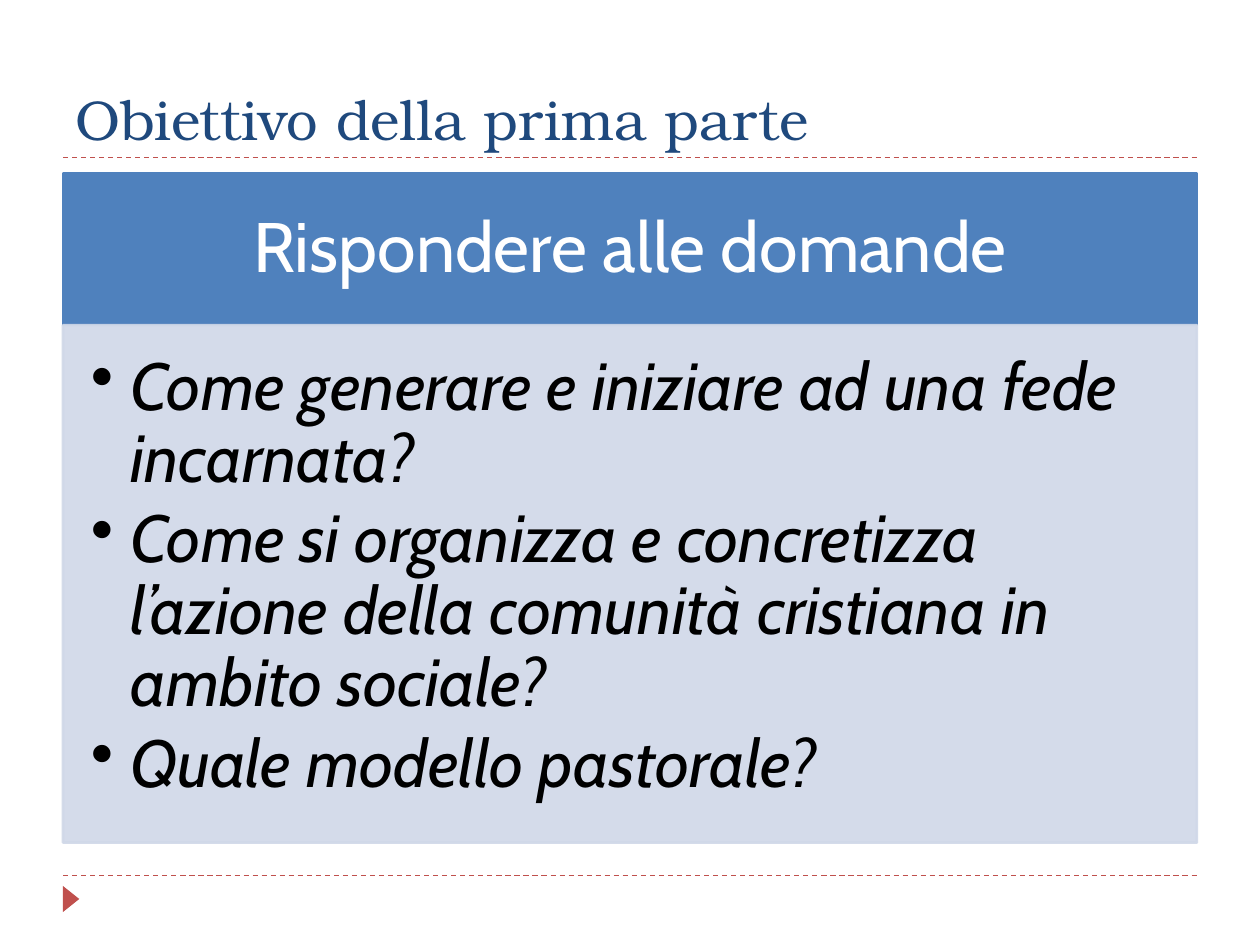
from lxml.etree import SubElement
from pptx import Presentation
from pptx.dml.color import RGBColor
from pptx.enum.dml import MSO_LINE_DASH_STYLE as Dash
from pptx.enum.shapes import MSO_CONNECTOR, MSO_SHAPE
from pptx.enum.text import MSO_ANCHOR as Anchor, PP_ALIGN as Align
from pptx.oxml.ns import qn
from pptx.util import Pt

# Content
TITLE = "Obiettivo della prima parte"
HEADING = "Rispondere alle domande"
QUESTIONS = [
    "Come generare e iniziare ad una fede incarnata?",
    "Come si organizza e concretizza l’azione della comunità cristiana in ambito sociale?",
    "Quale modello pastorale?",
]

# Style
RED = RGBColor(0xC0, 0x50, 0x4D)
NAVY = RGBColor(0x1F, 0x49, 0x7D)
BLUE = RGBColor(0x4F, 0x81, 0xBD)
PALE = RGBColor(0xD0, 0xD8, 0xE8)
WHITE = RGBColor(0xFF, 0xFF, 0xFF)
BLACK = RGBColor(0, 0, 0)
TITLE_FONT, BODY_FONT = "TeX Gyre Bonum", "Cabin"

# Layout in points
LEFT, WIDTH = 36, 648
RULES_Y = (500.4, 90)
HEAD_TOP, HEAD_HEIGHT = 99.2, 86.6
BODY_TOP, BODY_HEIGHT = HEAD_TOP + HEAD_HEIGHT, 295.7
INDENT = 22.5


def set_frame(shape, anchor, insets):
    frame = shape.text_frame
    frame.word_wrap = True
    frame.vertical_anchor = anchor
    (frame.margin_left, frame.margin_top,
     frame.margin_right, frame.margin_bottom) = map(Pt, insets)
    return frame


def write(paragraph, text, size, font, color, italic=False):
    run = paragraph.add_run()
    run.text = text
    run.font.size = Pt(size)
    run.font.name = font
    run.font.color.rgb = color
    run.font.italic = italic


def add_block(kind, left, top, width, height, color, outline=None, alpha=None):
    block = slide.shapes.add_shape(kind, Pt(left), Pt(top), Pt(width), Pt(height))
    block.shadow.inherit = False
    block.fill.solid()
    block.fill.fore_color.rgb = color
    if outline:
        block.line.color.rgb = color
        block.line.width = Pt(outline)
    else:
        block.line.fill.background()
    if alpha:
        for tint in block._element.spPr.iter(qn("a:srgbClr")):
            SubElement(tint, qn("a:alpha"), val=str(alpha * 1000))
    return block


def add_bullet(paragraph):
    props = paragraph._p.get_or_add_pPr()
    props.set("marL", str(Pt(INDENT)))
    props.set("indent", str(-Pt(INDENT)))
    SubElement(props, qn("a:buChar"), char="•")


prs = Presentation()
prs.slide_width, prs.slide_height = Pt(720), Pt(540)
slide = prs.slides.add_slide(prs.slide_layouts[6])

# Dashed rules and corner marker
for y in RULES_Y:
    rule = slide.shapes.add_connector(
        MSO_CONNECTOR.STRAIGHT, Pt(LEFT), Pt(y), Pt(LEFT + WIDTH), Pt(y))
    rule.line.color.rgb = RED
    rule.line.width = Pt(0.75)
    rule.line.dash_style = Dash.DASH
    SubElement(rule._element.spPr, qn("a:effectLst"))
marker = add_block(MSO_SHAPE.ISOSCELES_TRIANGLE, 33.1, 509, 15, 9.4, RED)
marker.rotation = 90

# Title
title = slide.shapes.add_textbox(Pt(LEFT), Pt(12.2), Pt(WIDTH), Pt(77.8))
title_frame = set_frame(title, Anchor.BOTTOM, (7.2, 3.6, 7.2, 3.6))
write(title_frame.paragraphs[0], TITLE, 32, TITLE_FONT, NAVY)

# Heading band
band = add_block(MSO_SHAPE.RECTANGLE, LEFT, HEAD_TOP, WIDTH, HEAD_HEIGHT, BLUE, 1.5)
heading = set_frame(band, Anchor.MIDDLE, (22.4, 12.8, 22.4, 12.8)).paragraphs[0]
heading.alignment = Align.CENTER
heading.line_spacing = 0.9
write(heading, HEADING, 40, BODY_FONT, WHITE)

# Questions panel
panel = add_block(MSO_SHAPE.RECTANGLE, LEFT, BODY_TOP, WIDTH, BODY_HEIGHT, PALE, 1.5, 90)
panel_frame = set_frame(panel, Anchor.TOP, (16, 16, 21.3, 24))
for i, text in enumerate(QUESTIONS):
    question = panel_frame.add_paragraph() if i else panel_frame.paragraphs[0]
    question.alignment = Align.LEFT
    question.line_spacing = 0.9
    question.space_after = Pt(5)
    add_bullet(question)
    write(question, text, 38, BODY_FONT, BLACK, italic=True)

prs.save("out.pptx")
